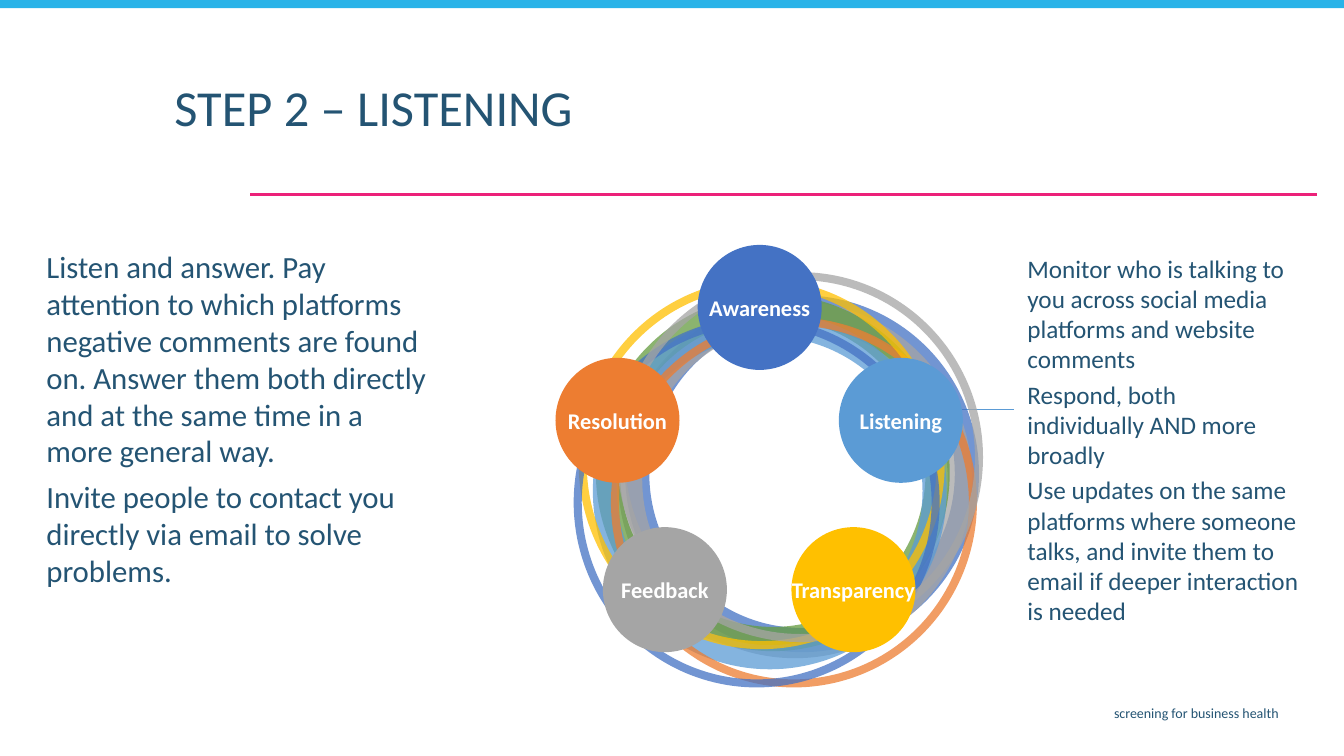
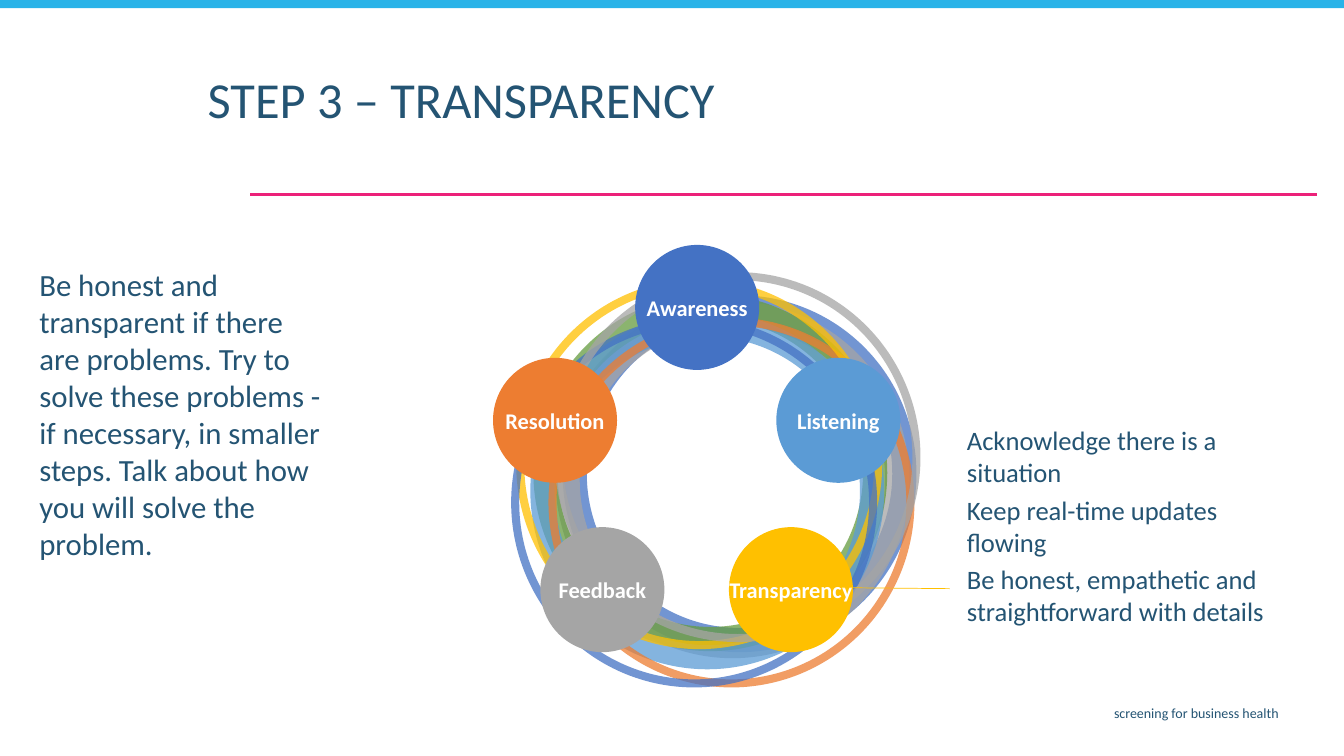
from lxml import etree
from pptx import Presentation
from pptx.dml.color import RGBColor
from pptx.enum import shapes as sh, text as tx
from pptx.oxml import ns
from pptx.util import Inches, Pt

FONT = "Calibri"
INK = RGBColor(0x24, 0x54, 0x73)
SKY = RGBColor(0x29, 0xB3, 0xE8)
PINK = RGBColor(0xEC, 0x21, 0x79)
WHITE = RGBColor(0xFF, 0xFF, 0xFF)
BLUE = RGBColor(0x44, 0x72, 0xC4)
LIGHT_BLUE = RGBColor(0x5B, 0x9B, 0xD5)
ORANGE = RGBColor(0xED, 0x7D, 0x31)
GOLD = RGBColor(0xFF, 0xC0, 0x00)
GREY = RGBColor(0xA5, 0xA5, 0xA5)
GREEN = RGBColor(0x65, 0x9C, 0x40)

# Ring sizes: width, height, band thickness
WIDE = (3.51, 3.54, 0.24)
THIN = (3.63, 3.67, 0.08)
# Rings and steps: offsets from the corner of the cycle, back to front
RINGS = [
    (0.69, 0.50, WIDE, BLUE), (0.62, 0.56, WIDE, GREY),
    (0.40, 0.49, WIDE, GREEN), (0.37, 0.67, WIDE, LIGHT_BLUE),
    (0.55, 0.72, THIN, ORANGE), (0.23, 0.34, THIN, GOLD),
    (0.18, 0.72, THIN, BLUE), (0.61, 0.27, THIN, GREY),
]
STEPS = [
    ("Transparency", 2.34, 2.80, GOLD), ("Feedback", 0.47, 2.80, GREY),
    ("Resolution", 0.00, 1.12, ORANGE), ("Listening", 2.81, 1.12, LIGHT_BLUE),
    ("Awareness", 1.41, 0.00, BLUE),
]
STEP_SIZE = (1.23, 1.24)
CYCLE_TOP = 2.43


def add_run(paragraph, words, size, color=INK, bold=False):
    run = paragraph.add_run()
    run.text = words
    run.font.name, run.font.size, run.font.bold = FONT, Pt(size), bold
    run.font.color.rgb = color


def add_filled(slide, preset, box, color):
    shape = slide.shapes.add_shape(preset, *map(Inches, box))
    shape.shadow.inherit = False
    shape.fill.solid()
    shape.fill.fore_color.rgb = color
    shape.line.fill.background()
    return shape


def add_line(slide, ends, color, width):
    line = slide.shapes.add_connector(sh.MSO_CONNECTOR.STRAIGHT, *map(Inches, ends))
    line.line.color.rgb = color
    line.line.width = Pt(width)
    etree.SubElement(line.element.spPr, ns.qn("a:effectLst"))
    return line


def fill_placeholder(holder, box, paragraphs, size, gap, inset, anchor):
    """Place a template placeholder and write plain paragraphs into it."""
    holder.left, holder.top, holder.width, holder.height = map(Inches, box)
    frame = holder.text_frame
    frame.word_wrap = True
    frame.auto_size = tx.MSO_AUTO_SIZE.NONE
    frame.vertical_anchor = anchor
    frame.margin_left = frame.margin_right = Inches(inset)
    frame.margin_top = frame.margin_bottom = Inches(inset / 2)
    for i, words in enumerate(paragraphs):
        paragraph = frame.paragraphs[0] if i == 0 else frame.add_paragraph()
        props = paragraph._p.get_or_add_pPr()
        props.set("marL", "0")
        props.set("indent", "0")
        etree.SubElement(props, ns.qn("a:buNone"))
        paragraph.alignment = tx.PP_ALIGN.LEFT
        paragraph.space_before = Pt(gap if i else 0)
        add_run(paragraph, words, size)


def add_shared_parts(layout, slide):
    """Draw the band, rule and footer, then hand them over to the layout."""
    band = add_filled(slide, sh.MSO_SHAPE.RECTANGLE, (0, 0, 13.33, 0.08), SKY)
    rule = add_line(slide, (2.48, 1.93, 13.06, 1.93), PINK, 1.5)
    footer = slide.shapes.add_textbox(*map(Inches, (3.65, 6.94, 9.13, 0.29)))
    footer.text_frame.word_wrap = True
    line = footer.text_frame.paragraphs[0]
    line.alignment = tx.PP_ALIGN.RIGHT
    add_run(line, "screening for business health", 10)
    for part in (band, rule, footer):
        layout.shapes.element.append(part.element)


def add_texts(slide, title, title_at, advice, advice_box, actions, actions_box, actions_size):
    title_holder, advice_holder, actions_holder = slide.placeholders
    fill_placeholder(title_holder, (*title_at, 9.94, 0.76), [title], 36, 0, 0.1,
                     tx.MSO_ANCHOR.MIDDLE)
    fill_placeholder(advice_holder, advice_box, advice, 22, 6, 0.09, tx.MSO_ANCHOR.TOP)
    fill_placeholder(actions_holder, actions_box, actions, actions_size,
                     round(actions_size * 0.2, 1), 0.04, tx.MSO_ANCHOR.TOP)


def add_rings(slide, left, top):
    for dx, dy, (width, height, band), color in RINGS:
        ring = add_filled(slide, sh.MSO_SHAPE.DONUT, (left + dx, top + dy, width, height), color)
        ring.adjustments[0] = band / width
        rgb = ring.fill._xPr.find(".//" + ns.qn("a:srgbClr"))
        etree.SubElement(rgb, ns.qn("a:alpha"), val="75000")


def add_steps(slide, left, top):
    for name, dx, dy, color in STEPS:
        step = add_filled(slide, sh.MSO_SHAPE.OVAL, (left + dx, top + dy, *STEP_SIZE), color)
        frame = step.text_frame
        frame.word_wrap = False
        frame.vertical_anchor = tx.MSO_ANCHOR.MIDDLE
        frame.paragraphs[0].alignment = tx.PP_ALIGN.CENTER
        add_run(frame.paragraphs[0], name, 16, WHITE, bold=True)


def add_listening(slide):
    add_texts(
        slide, "STEP 2 – LISTENING", (1.63, 0.67),
        ["Listen and answer. Pay attention to which platforms negative comments are found on. "
         "Answer them both directly and at the same time in a more general way.",
         "Invite people to contact you directly via email to solve problems."],
        (0.37, 2.41, 4.03, 3.51),
        ["Monitor who is talking to you across social media platforms and website comments",
         "Respond, both individually AND more broadly",
         "Use updates on the same platforms where someone talks, and invite them to email "
         "if deeper interaction is needed"],
        (10.15, 2.49, 2.77, 3.98), 18)
    # The pointer runs behind the rings
    add_line(slide, (9.45, 4.06, 10.06, 4.06), LIGHT_BLUE, 0.5)
    add_rings(slide, 5.51, CYCLE_TOP)
    add_steps(slide, 5.51, CYCLE_TOP)


def add_transparency(slide):
    add_texts(
        slide, "STEP 3 – TRANSPARENCY", (1.96, 0.6),
        ["Be honest and transparent if there are problems. Try to solve these problems - "
         "if necessary, in smaller steps. Talk about how you will solve the problem."],
        (0.3, 2.59, 3.01, 3.05),
        ["Acknowledge there is a situation", "Keep real-time updates flowing",
         "Be honest, empathetic and straightforward with details"],
        (9.55, 4.19, 3.36, 2.72), 19)
    add_rings(slide, 4.89, CYCLE_TOP)
    add_steps(slide, 4.89, CYCLE_TOP)
    # The pointer runs in front of the rings
    add_line(slide, (8.33, 5.83, 9.42, 5.84), GOLD, 0.5)


def main():
    prs = Presentation()
    prs.slide_width, prs.slide_height = Inches(13.33), Inches(7.5)
    layout = prs.slide_layouts.get_by_name("Two Content")
    listening, transparency = (prs.slides.add_slide(layout) for _ in range(2))
    add_shared_parts(layout, listening)
    add_listening(listening)
    add_transparency(transparency)
    prs.save("out.pptx")


if __name__ == "__main__":
    main()
